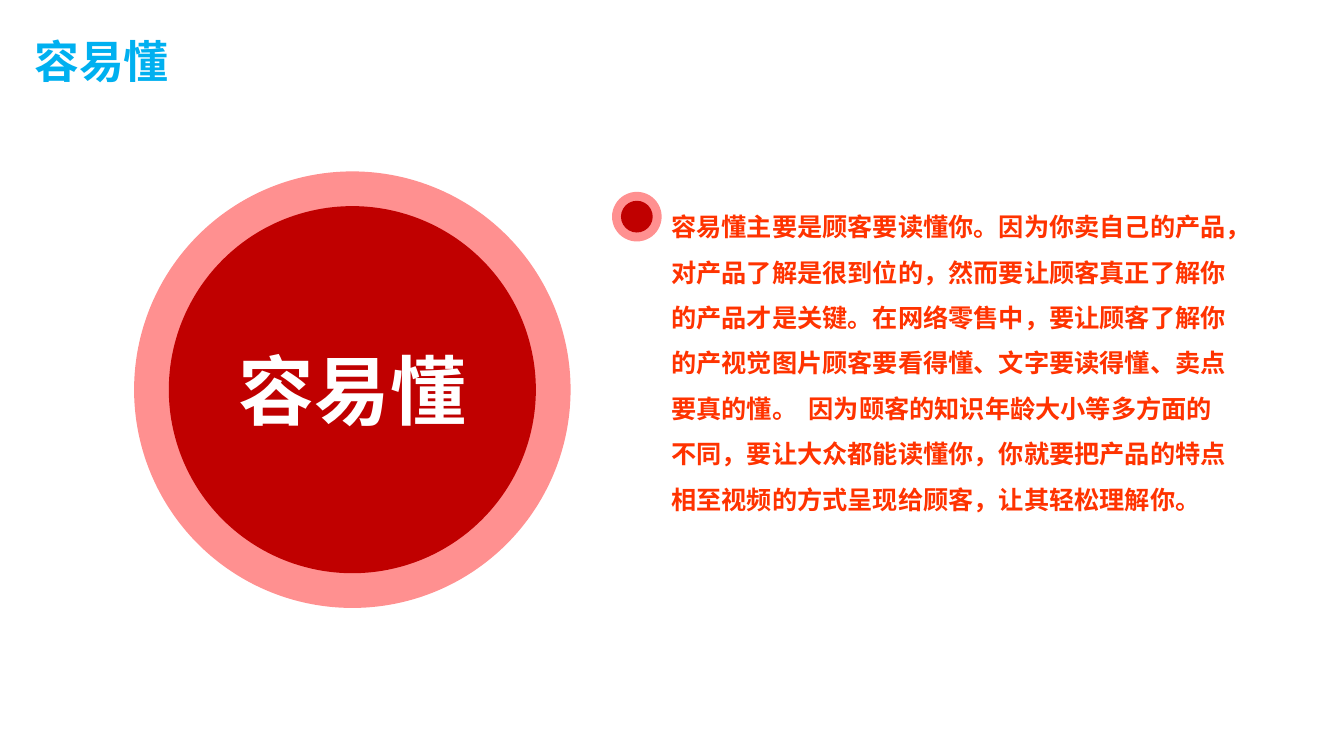
from dataclasses import dataclass

from lxml.etree import SubElement
from pptx import Presentation
from pptx.dml.color import RGBColor
from pptx.enum.shapes import MSO_SHAPE
from pptx.enum.text import MSO_ANCHOR, MSO_AUTO_SIZE, PP_ALIGN
from pptx.oxml.ns import qn
from pptx.slide import Slide
from pptx.util import Cm, Pt

PINK = RGBColor(0xFF, 0x90, 0x90)
DARK_RED = RGBColor(0xC0, 0x00, 0x00)
WHITE = RGBColor(0xFF, 0xFF, 0xFF)
ORANGE = RGBColor(0xFF, 0x33, 0x00)
SKY = RGBColor(0x00, 0xB0, 0xF0)
CJK_FONT = "Noto Sans CJK SC"

HEADING = "容易懂"
BODY = (
    "容易懂主要是顾客要读懂你。因为你卖自己的产品，对产品了解是很到位的，"
    "然而要让顾客真正了解你的产品才是关键。在网络零售中，要让顾客了解你的产"
    "视觉图片顾客要看得懂、文字要读得懂、卖点要真的懂。  因为颐客的知识年龄"
    "大小等多方面的不同，要让大众都能读懂你，你就要把产品的特点相至视频的"
    "方式呈现给顾客，让其轻松理解你。"
)


@dataclass
class Disc:
    x: float
    y: float
    outer: float
    inner: float


@dataclass
class Label:
    text: str
    left: float
    top: float
    width: float
    height: float
    size: int
    color: RGBColor
    font: str = CJK_FONT
    align: PP_ALIGN = PP_ALIGN.LEFT
    anchor: MSO_ANCHOR = MSO_ANCHOR.TOP
    wrap: bool = False
    spacing: float = 1.0


DISCS = [Disc(8.88, 9.82, 11, 9.25), Disc(16.05, 5.46, 1.25, 0.8)]
TITLE = Label(HEADING, 0.61, 0.71, 3.91, 1.63, 32, SKY)
LABELS = [
    Label(HEADING, 5.76, 8.54, 6.24, 2.56, 54, WHITE,
          align=PP_ALIGN.CENTER, anchor=MSO_ANCHOR.MIDDLE),
    Label(BODY, 16.67, 4.83, 14.68, 8.33, 18, ORANGE,
          font="Arial", wrap=True, spacing=1.5),
]


def draw_disc(s: Slide, disc: Disc) -> None:
    for size, color in ((disc.outer, PINK), (disc.inner, DARK_RED)):
        sp = s.shapes.add_shape(
            MSO_SHAPE.OVAL, Cm(disc.x - size / 2), Cm(disc.y - size / 2),
            Cm(size), Cm(size))
        sp.shadow.inherit = False
        sp.fill.solid()
        sp.fill.fore_color.rgb = color
        sp.line.fill.background()


def write_label(sp, label: Label) -> None:
    sp.left, sp.top = Cm(label.left), Cm(label.top)
    sp.width, sp.height = Cm(label.width), Cm(label.height)
    tf = sp.text_frame
    tf.text = label.text
    tf.word_wrap = label.wrap
    tf.auto_size = MSO_AUTO_SIZE.SHAPE_TO_FIT_TEXT
    tf.vertical_anchor = label.anchor
    p = tf.paragraphs[0]
    p.alignment = label.align
    p.line_spacing = label.spacing
    r = p.runs[0]
    r.font.size = Pt(label.size)
    r.font.bold = True
    r.font.color.rgb = label.color
    r.font.name = label.font
    SubElement(r.font._element, qn("a:ea"), typeface=CJK_FONT)


def main() -> None:
    prs = Presentation()
    prs.slide_width, prs.slide_height = Cm(33.87), Cm(19.05)
    s = prs.slides.add_slide(prs.slide_layouts[5])
    write_label(s.shapes.title, TITLE)
    for disc in DISCS:
        draw_disc(s, disc)
    for label in LABELS:
        write_label(s.shapes.add_textbox(0, 0, 0, 0), label)
    prs.save("out.pptx")


if __name__ == "__main__":
    main()
